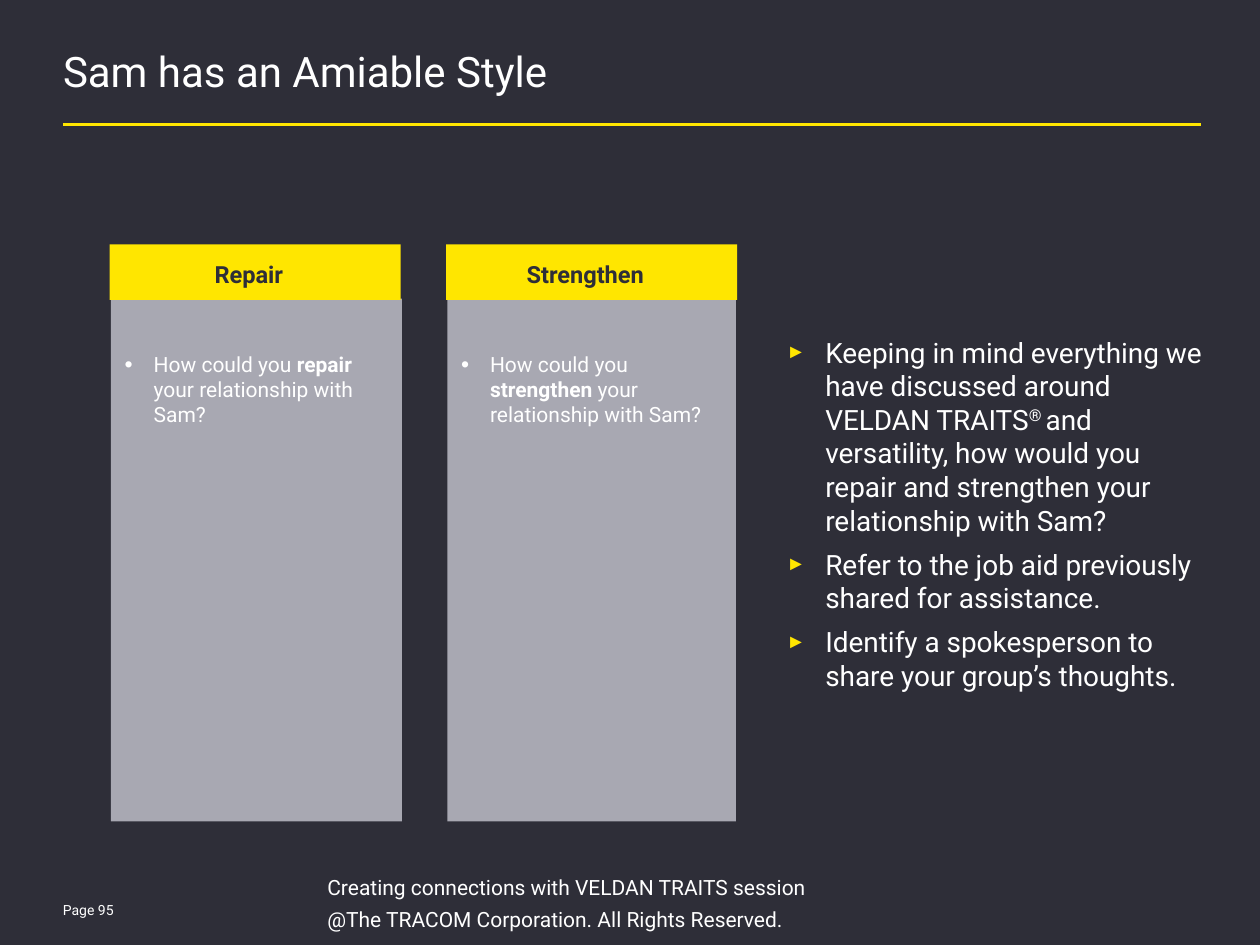
from lxml import etree
from pptx import Presentation
from pptx.dml.color import RGBColor
from pptx.enum import shapes, text
from pptx.oxml.ns import qn
from pptx.util import Inches, Pt

FONT = "Roboto"
DARK, WHITE, YELLOW, GREY = "2E2E38", "FFFFFF", "FFE600", "C4C4CD"

TITLE = "Sam has an Amiable Style"
# A run is (text, style); the style is "", "bold" or "super".
PANELS = [
    ("Repair", 2.31, [("How could you ", ""), ("repair", "bold"),
                      (" your relationship with Sam?", "")]),
    ("Strengthen", 2.29, [("How could you ", ""), ("strengthen", "bold"),
                          (" your relationship with Sam?", "")]),
]
TASKS = [
    [("Keeping in mind everything we have discussed around VELDAN TRAITS", ""),
     ("® ", "super"),
     ("and versatility, how would you repair and strengthen your "
      "relationship with Sam?", "")],
    [("Refer to the job aid previously shared for assistance.", "")],
    [("Identify a spokesperson to share your group’s thoughts.", "")],
]
FOOTER = [
    [("Creating connections with VELDAN TRAITS session", "")],
    [("@The TRACOM Corporation. All Rights Reserved.", "")],
]
PAGE = [[("Page 95", "")]]

PANEL_LEFT, PANEL_PITCH = 0.88, 2.67
HEADER_TOP, HEADER_WIDTH, HEADER_HEIGHT = 1.94, 2.31, 0.44
PANEL_TOP, PANEL_HEIGHT = 2.37, 4.15


def color(value):
    return RGBColor.from_string(value)


def place(shape, left, top, width, height):
    shape.left, shape.top = Inches(left), Inches(top)
    shape.width, shape.height = Inches(width), Inches(height)


def add_bullet(paragraph, char, fill, percent, indent):
    properties = paragraph._p.get_or_add_pPr()
    properties.set("marL", str(Inches(indent)))
    properties.set("indent", str(-Inches(indent)))
    bullet_color = etree.SubElement(properties, qn("a:buClr"))
    etree.SubElement(bullet_color, qn("a:srgbClr"), val=fill)
    etree.SubElement(properties, qn("a:buSzPct"), val=str(percent * 1000))
    etree.SubElement(properties, qn("a:buFont"), typeface="Arial")
    etree.SubElement(properties, qn("a:buChar"), char=char)


def write(shape, paragraphs, size, fill=WHITE, align=text.PP_ALIGN.LEFT,
          after=0, spacing=1.0, bullet=None, insets=None):
    frame = shape.text_frame
    frame.word_wrap = True
    frame.auto_size = text.MSO_AUTO_SIZE.NONE
    frame.vertical_anchor = text.MSO_ANCHOR.TOP
    if insets:
        (frame.margin_left, frame.margin_top,
         frame.margin_right, frame.margin_bottom) = map(Inches, insets)
    for index, runs in enumerate(paragraphs):
        paragraph = frame.add_paragraph() if index else frame.paragraphs[0]
        if bullet:
            add_bullet(paragraph, *bullet)
        paragraph.alignment = align
        paragraph.line_spacing = spacing
        paragraph.space_before, paragraph.space_after = Pt(0), Pt(after)
        for content, style in runs:
            run = paragraph.add_run()
            run.text = content
            run.font.name, run.font.size = FONT, Pt(size)
            run.font.color.rgb = color(fill)
            run.font.bold = style == "bold"
            if style == "super":
                run.font._element.set("baseline", "30000")


def add_text(slide, box, paragraphs, size, **options):
    write(slide.shapes.add_textbox(*map(Inches, box)), paragraphs, size, **options)


def add_rectangle(slide, box, fill, opacity=100):
    shape = slide.shapes.add_shape(shapes.MSO_SHAPE.RECTANGLE, *map(Inches, box))
    shape.shadow.inherit = False
    shape.fill.solid()
    shape.fill.fore_color.rgb = color(fill)
    shape.line.fill.background()
    if opacity < 100:
        fill_color = shape._element.spPr.find(qn("a:solidFill"))[0]
        etree.SubElement(fill_color, qn("a:alpha"), val=str(opacity * 1000))


def add_rule(slide):
    rule = slide.shapes.add_connector(
        shapes.MSO_CONNECTOR.STRAIGHT, *map(Inches, (0.5, 0.99, 9.53, 0.99)))
    rule.line.color.rgb = color(YELLOW)
    rule.line.width = Pt(1.5)
    etree.SubElement(rule._element.spPr, qn("a:effectLst"))


def add_panel(slide, index, heading, width, question):
    left = PANEL_LEFT + index * PANEL_PITCH
    add_rectangle(slide, (left, PANEL_TOP, width, PANEL_HEIGHT), GREY, 82)
    add_rectangle(slide, (left - 0.01, HEADER_TOP, HEADER_WIDTH, HEADER_HEIGHT),
                  YELLOW)
    tight = (0, 0.02, 0, 0)
    add_text(slide, (left + 0.59, 2.04, 1.01, 0.25), [[(heading, "bold")]], 13.5,
             fill=DARK, align=text.PP_ALIGN.CENTER, after=4.5, insets=tight)
    add_text(slide, (left + 0.11, 2.77, 1.96, 0.63), [question], 12,
             after=2.2, bullet=("•", WHITE, 110, 0.23), insets=tight)


def main():
    presentation = Presentation()
    presentation.slide_width, presentation.slide_height = Inches(10), Inches(7.5)
    slide = presentation.slides.add_slide(presentation.slide_layouts[1])
    slide.background.fill.solid()
    slide.background.fill.fore_color.rgb = color(DARK)

    title, body = slide.placeholders
    place(title, 0.5, 0.42, 9.02, 0.89)
    write(title, [[(TITLE, "")]], 24, spacing=0.85, insets=(0, 0, 0, 0))
    add_rule(slide)

    for index, panel in enumerate(PANELS):
        add_panel(slide, index, *panel)

    place(body, 6.14, 2.61, 3.55, 3)
    write(body, TASKS, 16, after=6, bullet=("►", YELLOW, 70, 0.31))

    add_text(slide, (0.4, 7.11, 0.73, 0.2), PAGE, 8)
    add_text(slide, (2.5, 6.92, 5, 0.53), FOOTER, 12, after=6, spacing=0.85)
    presentation.save("out.pptx")


if __name__ == "__main__":
    main()
